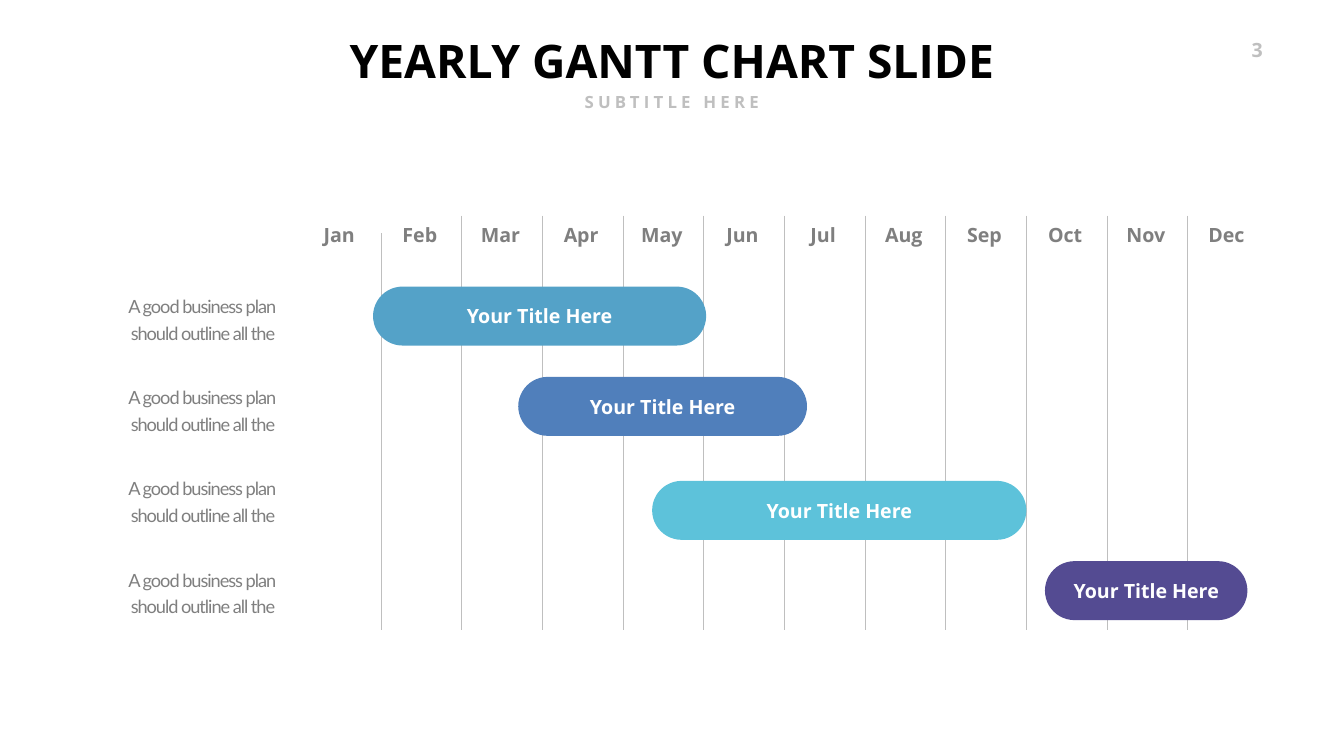
from lxml.etree import SubElement
from pptx import Presentation
from pptx.dml.color import RGBColor
from pptx.enum.shapes import MSO_CONNECTOR, MSO_SHAPE
from pptx.enum.text import MSO_ANCHOR, MSO_AUTO_SIZE, PP_ALIGN
from pptx.oxml.ns import qn
from pptx.util import Inches, Pt

COLOURS = {
    "title": "000000",
    "pale": "BFBFBF",
    "grey": "7F7F7F",
    "white": "FFFFFF",
    "blue": "54A2C8",
    "royal": "507FBB",
    "aqua": "5DC2DA",
    "violet": "544B92",
}
MONTHS = "Jan Feb Mar Apr May Jun Jul Aug Sep Oct Nov Dec".split()
BARS = [
    (0.9, 0.02, 4.13, "blue"),
    (2.7, 1.01, 3.58, "royal"),
    (4.36, 2.15, 4.64, "aqua"),
    (9.23, 3.03, 2.51, "violet"),
]
GRID_LEFT, COLUMN = 5.96, 1.6
GRID_TOP, ROW = 5.65, 1.81
LINE_TOP, LINE_BOTTOM = 4.28, 12.51
LABEL = "A good business plan should outline all the"


def colour(name):
    """Return the named colour."""
    return RGBColor.from_string(COLOURS[name])


def column_x(column):
    """Return the left edge of a month column, in inches."""
    return GRID_LEFT + column * COLUMN


def row_y(row):
    """Return the top edge of a task row, in inches."""
    return GRID_TOP + row * ROW


def write(shape, text, size, colour_name, align=PP_ALIGN.CENTER, anchor=MSO_ANCHOR.TOP,
          font="Open Sans", bold=True, spacing=0, wrap=False):
    """Put formatted text in a shape and return its paragraph."""
    frame = shape.text_frame
    frame.text = text
    frame.word_wrap = wrap
    frame.vertical_anchor = anchor
    paragraph = frame.paragraphs[0]
    paragraph.alignment = align
    run = paragraph.runs[0]
    run.font.name = font
    run.font.size = Pt(size)
    run.font.bold = bold
    run.font.color.rgb = colour(colour_name)
    if spacing:
        run.font._element.set("spc", str(int(spacing * 100)))
    return paragraph


def add_text(slide, box, *args, **formatting):
    """Add a text box that grows with its text."""
    shape = slide.shapes.add_textbox(*map(Inches, box))
    paragraph = write(shape, *args, **formatting)
    shape.text_frame.auto_size = MSO_AUTO_SIZE.SHAPE_TO_FIT_TEXT
    return shape, paragraph


def add_heading(slide):
    """Fill the title and add the subtitle and slide number."""
    title = slide.shapes.title
    title.left, title.top, title.width, title.height = map(Inches, (6.61, 0.59, 13.44, 1.21))
    write(title, "YEARLY GANTT CHART SLIDE", 66, "title")
    title.text_frame.auto_size = MSO_AUTO_SIZE.SHAPE_TO_FIT_TEXT
    add_text(slide, (11.39, 1.77, 3.87, 0.5), "SUBTITLE HERE", 24, "pale", spacing=6)
    add_text(slide, (24.28, 0.7, 0.87, 0.57), "3", 28, "pale", align=PP_ALIGN.RIGHT, spacing=3)


def add_month(slide, column, name):
    """Add a month name centred over its column."""
    width = 1.2
    left = column_x(column + 0.48) - width / 2
    add_text(slide, (left, 4.36, width, 0.57), name, 28, "grey", anchor=MSO_ANCHOR.BOTTOM)


def add_divider(slide, column, top):
    """Add the vertical line at the left of a column."""
    x = Inches(column_x(column))
    line = slide.shapes.add_connector(MSO_CONNECTOR.STRAIGHT, x, Inches(top), x, Inches(LINE_BOTTOM))
    line.line.color.rgb = colour("pale")
    line.line.width = Pt(1.5)
    SubElement(line._element.spPr, qn("a:effectLst"))


def add_label(slide, row):
    """Add the description at the left of a task row."""
    shape, paragraph = add_text(
        slide, (1.72, row_y(row), 4.01, 1.28), LABEL, 26, "grey", align=PP_ALIGN.RIGHT,
        anchor=MSO_ANCHOR.MIDDLE, font="Lato", bold=False, spacing=-1.5, wrap=True)
    paragraph.line_spacing = Pt(38)
    frame = shape.text_frame
    frame.margin_left = frame.margin_right = Inches(0.27)
    frame.margin_top = frame.margin_bottom = Inches(0.13)


def add_bar(slide, column, row, span, fill):
    """Add a titled task bar spanning a number of columns."""
    bar = slide.shapes.add_shape(
        MSO_SHAPE.ROUNDED_RECTANGLE, Inches(column_x(column)), Inches(row_y(row)),
        Inches(span * COLUMN), Inches(1.17))
    bar.adjustments[0] = 0.5
    bar.shadow.inherit = False
    bar.fill.solid()
    bar.fill.fore_color.rgb = colour(fill)
    bar.line.fill.background()
    write(bar, "Your Title Here", 28, "white", anchor=MSO_ANCHOR.MIDDLE)


def main():
    """Build the yearly Gantt chart slide."""
    presentation = Presentation()
    presentation.slide_width = Inches(26.66)
    presentation.slide_height = Inches(15)
    slide = presentation.slides.add_slide(presentation.slide_layouts[5])
    add_heading(slide)
    for column, name in enumerate(MONTHS):
        add_month(slide, column, name)
    for column in range(1, len(MONTHS)):
        add_divider(slide, column, 4.63 if column == 1 else LINE_TOP)
    for row, bar in enumerate(BARS):
        add_label(slide, row)
        add_bar(slide, *bar)
    presentation.save("out.pptx")


if __name__ == "__main__":
    main()
